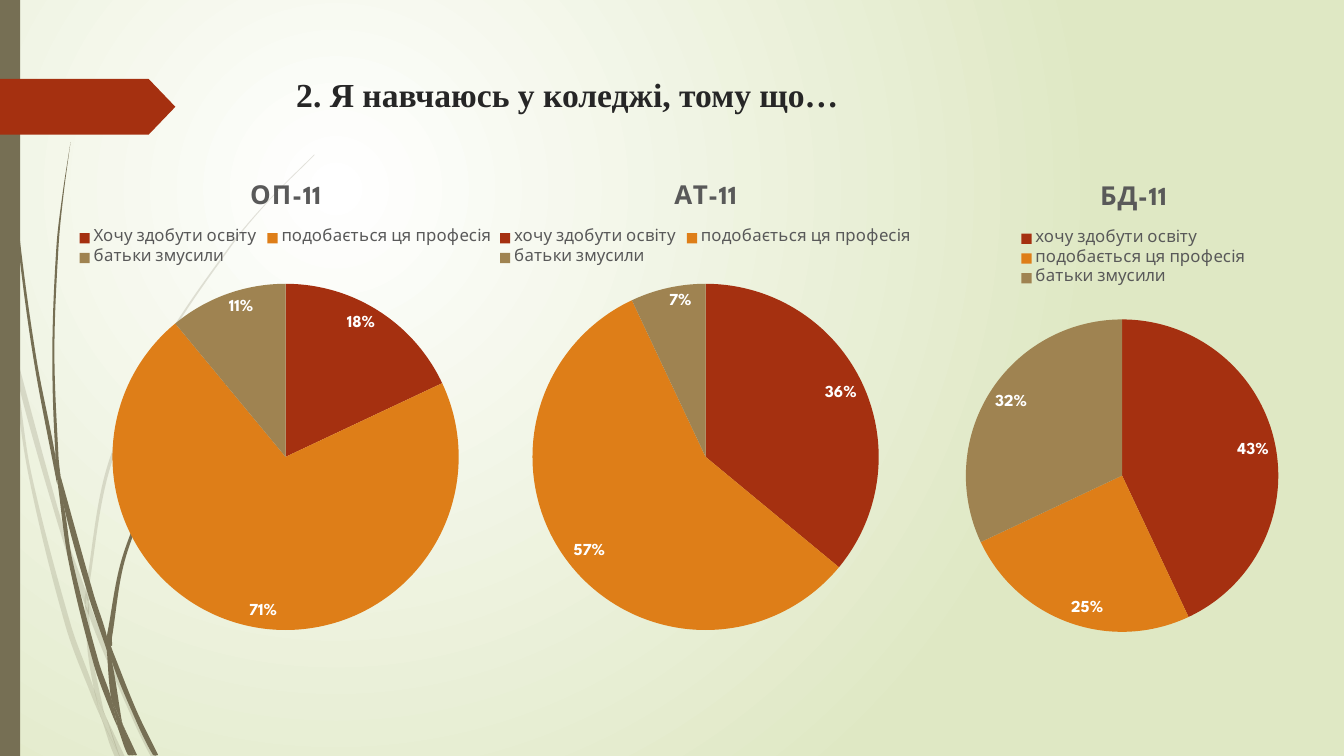
from math import hypot
from lxml import etree
from pptx import Presentation
from pptx.chart.data import CategoryChartData
from pptx.dml.color import RGBColor
from pptx.enum.chart import XL_CHART_TYPE, XL_LABEL_POSITION, XL_LEGEND_POSITION
from pptx.enum.shapes import MSO_SHAPE
from pptx.oxml.ns import qn
from pptx.util import Pt

PIE = XL_CHART_TYPE.PIE
INSIDE_END = XL_LABEL_POSITION.INSIDE_END
LEGEND_TOP = XL_LEGEND_POSITION.TOP
RECTANGLE = MSO_SHAPE.RECTANGLE
PENTAGON = MSO_SHAPE.PENTAGON

CHART_FONT = "League Spartan"
OLIVE, RUST, GREY = "766F54", "A53010", "595959"
SLICE_COLOURS = (RUST, "DE7E18", "9F8351")

PALE_BLADES = (
    (((0, 203), (6.5, 231.8), (7.9, 252)), ((7.2, 247.7), (0, 215.3))),
    (((10.1, 248.4), (44.6, 374.4), (61.2, 421.9)), ((60.5, 431.3), (41.8, 375.8), (12.2, 270.7))),
    (((63.4, 429.1), (66.2, 437), (91.4, 498.2), (111.6, 540.7)), ((108, 540.7), (88.6, 499.7), (63.4, 439.2))),
    (((75.6, 511.9), (89.3, 540.7)), ((85.7, 540.7),)),
    (((7.9, 252), (12.2, 270.7), (22.3, 337.7), (50.4, 445.7), (67, 491.8), (71.3, 509), (72.7, 514.1)),
     ((66.2, 499), (46.8, 447.1), (20.2, 338.4))),
    (((60.5, 431.3), (63.4, 437.8), (65.5, 465.1), (74.2, 508.3), (75.6, 511.9)),
     ((69.1, 498.2), (67, 491.8), (62.6, 465.1))),
    (((224.6, 110.2), (193, 141.8), (164.2, 175.7), (113.8, 250.6), (77, 331.9), (61.2, 420.5), (61.2, 421.9)),
     ((63.4, 429.1), (63.4, 420.5), (79.2, 332.6), (115.2, 251.3), (164.9, 176.4), (193, 142.6), (224.6, 110.9))),
    (((72.7, 514.1), (85.7, 540.7)), ((82.1, 540.7),)),
    (((61.2, 421.9), (63.4, 429.1), (63.4, 439.2)), ((60.5, 431.3),)),
    (((67, 491.8), (69.1, 498.2), (75.6, 511.9), (85.7, 540.7)), ((72.7, 514.1), (71.3, 509))),
)
DARK_BLADES = (
    (((2.9, 0), (3.6, 34.6), (5.8, 78.5), (13.7, 167), (25.9, 255.6), (39.6, 326.2), (41, 346.3)),
     ((40.3, 343.4), (23.8, 255.6), (12.2, 167.8), (5, 79.2), (2.9, 34.6), (2.2, 0))),
    (((43.2, 339.8), (67, 424.8), (76.3, 454.3), (76.3, 464.4)), ((63.4, 426.2), (46.1, 363.6))),
    (((79.2, 461.5), (81.4, 467.3), (97.9, 508.3), (113, 539.3)), ((109.4, 539.3), (95, 509.8), (79.9, 472.3))),
    (((41, 343.4), (46.1, 363.6), (51.8, 400.3), (70.6, 473), (79.2, 497.5), (83.5, 516.2), (84.2, 519.8)),
     ((79.9, 509.8), (67, 474.5), (49, 401))),
    (((50.4, 101.5), (44.6, 139), (40.3, 176.4), (37.4, 251.3), (39.6, 323.3), (43.2, 339.8)),
     ((41.8, 326.2), (38.9, 251.3), (41.8, 176.4), (45.4, 139))),
    (((87.8, 517.7), (97.9, 539.3)), ((95.8, 539.3),)),
    (((39.6, 323.3), (43.2, 339.8), (46.1, 363.6)), ((41, 343.4), (39.6, 326.2))),
    (((187.2, 247.7), (166.3, 268.6), (146.9, 291.6), (112.3, 341.3), (87.8, 396.7), (76.3, 454.3)),
     ((79.2, 461.5), (79.9, 455.8), (90, 397.4), (113.8, 342.7), (147.6, 292.3), (166.3, 269.3), (187.9, 247.7))),
    (((84.2, 519.8), (94.3, 539.3)), ((91.4, 539.3),)),
    (((76.3, 464.4), (79.9, 472.3), (87.1, 515.5), (87.8, 517.7)), ((83.5, 508.3), (79.2, 497.5))),
    (((76.3, 454.3), (79.2, 461.5), (79.9, 472.3)), ((76.3, 464.4),)),
    (((79.2, 497.5), (83.5, 508.3), (87.8, 517.7), (95.8, 539.3)), ((93.6, 539.3), (84.2, 519.8), (83.5, 516.2))),
)


def colour(value):
    return RGBColor.from_string(value)


def paint(shape, value, opacity=100):
    shape.shadow.inherit = False
    shape.fill.solid()
    shape.fill.fore_color.rgb = colour(value)
    shape.line.fill.background()
    if opacity < 100:
        tint = shape._element.spPr.find(".//" + qn("a:srgbClr"))
        etree.SubElement(tint, qn("a:alpha")).set("val", str(opacity * 1000))


def set_font(font, size, value, bold=False, face=CHART_FONT):
    font.name = face
    font.size = Pt(size)
    font.bold = bold
    font.color.rgb = colour(value)


def handle(knot, before, after, reach):
    dx, dy = after[0] - before[0], after[1] - before[1]
    scale = reach / (hypot(dx, dy) or 1)
    return knot[0] + dx * scale, knot[1] + dy * scale


def curves_through(knots):
    padded = (knots[0], *knots, knots[-1])
    for a, b, c, d in zip(padded, padded[1:], padded[2:], padded[3:]):
        reach = hypot(c[0] - b[0], c[1] - b[1]) / 3
        yield handle(b, a, c, reach), handle(c, b, d, -reach), c


def add_background(slide):
    fill = slide.background.fill
    fill.gradient()
    for stop, value, position in zip(fill.gradient_stops, ("FFFFFF", "DFE8C4"), (0, 1)):
        stop.color.rgb = colour(value)
        stop.position = position
    gradient = slide._element.find(".//" + qn("a:gradFill"))
    gradient.remove(gradient.find(qn("a:lin")))
    circle = etree.SubElement(gradient, qn("a:path"))
    circle.set("path", "circle")
    focus = etree.SubElement(circle, qn("a:fillToRect"))
    for side, percent in zip("ltrb", (50, 50, 100, 100)):
        focus.set(side, str(percent * 1000))


def add_blade(slide, left, top, down, up, opacity):
    outline = [(Pt(left + x), Pt(top + y)) for x, y in down + up + down[:1]]
    builder = slide.shapes.build_freeform(*outline[0])
    builder.add_line_segments(outline[1:], close=True)
    blade = builder.convert_to_shape()
    curves = (*curves_through(outline[:len(down)]), *curves_through(outline[len(down) - 1:]))
    for segment, curve in zip(blade._element.findall(".//" + qn("a:lnTo")), curves):
        segment.tag = qn("a:cubicBezTo")
        segment.remove(segment[0])
        for x, y in curve:
            point = etree.SubElement(segment, qn("a:pt"))
            point.set("x", str(round(x - blade.left)))
            point.set("y", str(round(y - blade.top)))
    paint(blade, OLIVE, opacity)


def add_side_decoration(slide, left, top, height):
    for blades, opacity in ((PALE_BLADES, 20), (DARK_BLADES, 100)):
        for down, up in blades:
            add_blade(slide, left, top, down, up, opacity)
    bar = slide.shapes.add_shape(RECTANGLE, Pt(left), Pt(top), Pt(14.4), Pt(height))
    paint(bar, OLIVE)
    pointer = slide.shapes.add_shape(PENTAGON, Pt(left), Pt(top + 56.4), Pt(125.3), Pt(39.8))
    pointer.adjustments[0] = 0.48
    paint(pointer, RUST)


def add_heading(slide, left, top, width, height, wording):
    heading = slide.shapes.add_textbox(Pt(left), Pt(top), Pt(width), Pt(height))
    heading.text_frame.word_wrap = True
    line = heading.text_frame.paragraphs[0]
    line.text = wording
    set_font(line.font, 24, "262626", True, "Times New Roman")


def fix_plot_area(chart, box):
    plot_area = chart._chartSpace.chart.plotArea
    for old in plot_area.findall(qn("c:layout")):
        plot_area.remove(old)
    layout = etree.Element(qn("c:layout"))
    manual = etree.SubElement(layout, qn("c:manualLayout"))
    for tag, value in (("layoutTarget", "inner"), ("xMode", "edge"), ("yMode", "edge"), *zip("xywh", box)):
        etree.SubElement(manual, qn("c:" + tag)).set("val", str(value))
    plot_area.insert(0, layout)


def add_group_pie(slide, left, top, width, height, group, answers, shares, plot_box=None):
    data = CategoryChartData()
    data.categories = answers
    data.add_series(group, shares)
    chart = slide.shapes.add_chart(PIE, Pt(left), Pt(top), Pt(width), Pt(height), data).chart
    set_font(chart.font, 10, "000000")
    chart.has_title = True
    title = chart.chart_title.text_frame.paragraphs[0]
    title.text = group
    set_font(title.font, 18.6, GREY, True)
    title.font._rPr.set("spc", "50")
    chart.chart_title.include_in_layout = False
    chart.has_legend = True
    chart.legend.position = LEGEND_TOP
    chart.legend.include_in_layout = False
    set_font(chart.legend.font, 12, GREY)
    pie = chart.plots[0]
    pie.vary_by_categories = True
    for index, value in enumerate(SLICE_COLOURS):
        slice_format = pie.series[0].points[index].format
        slice_format.fill.solid()
        slice_format.fill.fore_color.rgb = colour(value)
        slice_format.line.fill.background()
    pie.has_data_labels = True
    labels = pie.data_labels
    labels.show_value = False
    labels.show_percentage = True
    labels.number_format = "0%"
    labels.number_format_is_linked = False
    labels.position = INSIDE_END
    set_font(labels.font, 12, "FFFFFF", True)
    if plot_box:
        fix_plot_area(chart, plot_box)


def main():
    deck = Presentation()
    deck.slide_width, deck.slide_height = Pt(960), Pt(540)
    slide = deck.slides.add_slide(deck.slide_layouts[6])
    add_background(slide)
    add_side_decoration(slide, 0, 0, 540)
    add_heading(slide, 204.5, 49, 702, 101, "2. Я навчаюсь у коледжі, тому що…")
    other_answers = ("подобається ця професія", "батьки змусили")
    answers = ("хочу здобути освіту", *other_answers)
    add_group_pie(slide, 17.5, 116.6, 373, 343.4, "ОП-11", ("Хочу здобути освіту", *other_answers), (18, 71, 11))
    add_group_pie(slide, 317.5, 116.6, 373, 343.4, "АТ-11", answers, (36, 57, 7))
    add_group_pie(slide, 647.3, 116.6, 324.7, 360, "БД-11", answers, (43, 25, 32), (0.13, 0.31, 0.69, 0.62))
    deck.save("out.pptx")


if __name__ == "__main__":
    main()
